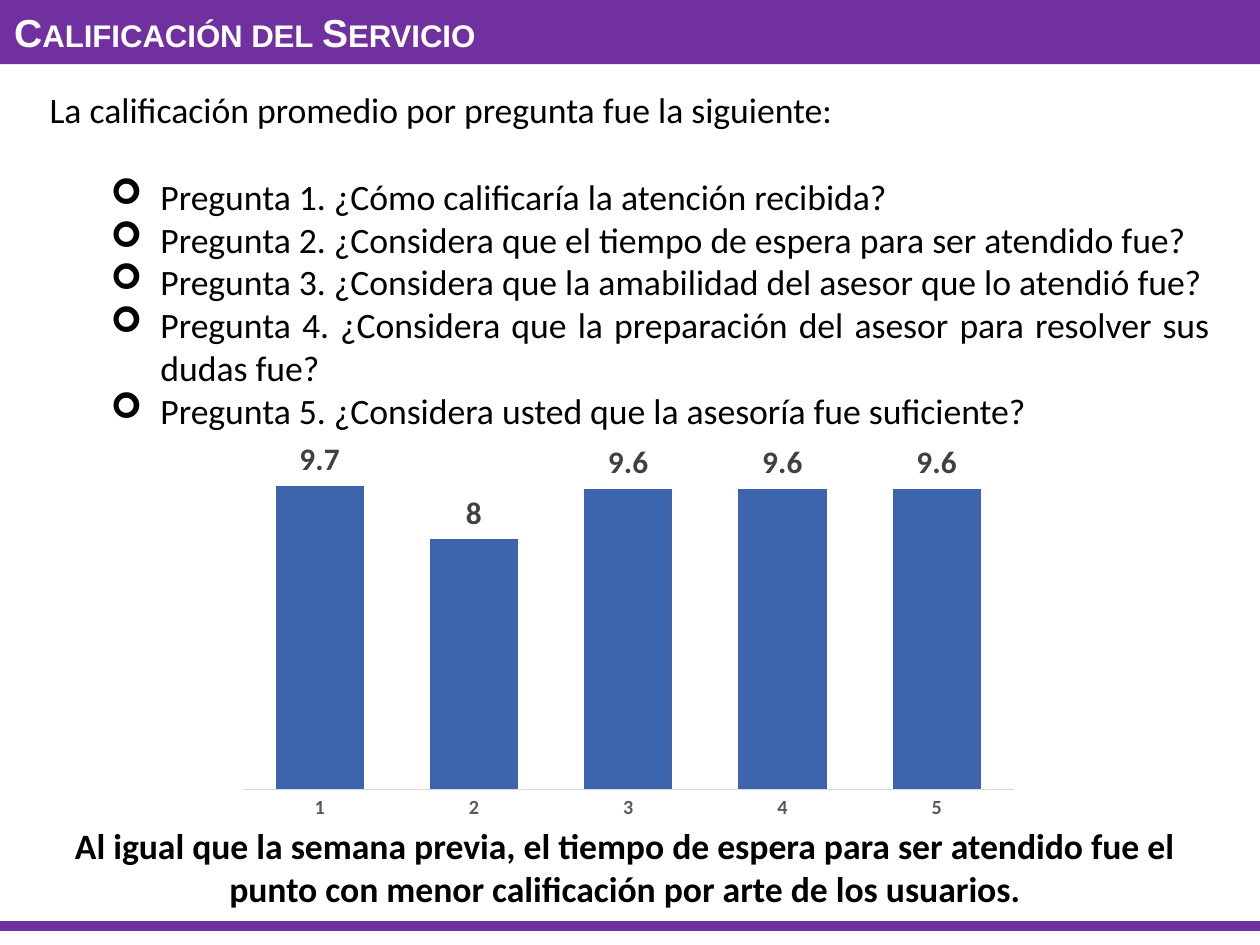
from lxml import etree
from pptx import Presentation
from pptx import util as u
from pptx.chart.data import CategoryChartData
from pptx.dml.color import RGBColor
from pptx.enum import chart as ch, shapes, text
from pptx.oxml import parse_xml
from pptx.oxml.ns import nsdecls, qn

# The slide is a grid of 112 columns by 84 rows of square cells
COLS, ROWS, CELL = 112, 84, 0.07
COLORS = {"purple": "7030A0", "white": "FFFFFF", "black": "000000",
          "bar": "3C65AE", "label": "404040", "tick": "595959", "axis": "D9D9D9"}
ALIGN = text.PP_ALIGN

QUESTIONS = [
    "¿Cómo calificaría la atención recibida?",
    "¿Considera que el tiempo de espera para ser atendido fue?",
    "¿Considera que la amabilidad del asesor que lo atendió fue?",
    "¿Considera que la preparación del asesor para resolver sus dudas fue?",
    "¿Considera usted que la asesoría fue suficiente?",
]
SCORES = [9.7, 8, 9.6, 9.6, 9.6]


def grid(*cells):
    return [u.Inches(c * CELL) for c in cells]


def rgb(name):
    return RGBColor.from_string(COLORS[name])


def set_font(font, size, color="black", bold=False, name="Calibri"):
    font.size, font.bold, font.name = u.Pt(size), bold, name
    font.color.rgb = rgb(color)


def add_box(slide, *cells, anchor=text.MSO_ANCHOR.TOP):
    tf = slide.shapes.add_textbox(*grid(*cells)).text_frame
    tf.word_wrap = True
    tf.vertical_anchor = anchor
    return tf


def write(tf, words, align=ALIGN.LEFT, bullet=None, before=0, **fmt):
    p = tf.paragraphs[0] if not tf.paragraphs[0].runs else tf.add_paragraph()
    p.alignment = align
    if before:
        p.space_before = u.Pt(before)
    if bullet:
        pPr = p._p.get_or_add_pPr()
        pPr.set("marL", str(u.Inches(0.69)))
        pPr.set("indent", str(u.Inches(-0.31)))
        etree.SubElement(pPr, qn("a:buFont")).set("typeface", "Wingdings")
        etree.SubElement(pPr, qn("a:buChar")).set("char", bullet)
    r = p.add_run()
    r.text = words
    set_font(r.font, **fmt)
    return r


def add_band(slide, *cells):
    sp = slide.shapes.add_shape(shapes.MSO_SHAPE.RECTANGLE, *grid(*cells))
    sp.shadow.inherit = False
    sp.fill.solid()
    sp.fill.fore_color.rgb = rgb("purple")
    sp.line.fill.background()


def add_rule(slide, row, width):
    line = slide.shapes.add_connector(
        shapes.MSO_CONNECTOR.STRAIGHT, *grid(-0.29, row, COLS + 0.29, row))
    line.line.color.rgb = rgb("purple")
    line.line.width = u.Pt(width)
    etree.SubElement(line._element.spPr, qn("a:effectLst"))


def add_title(slide, words):
    tf = add_box(slide, -0.14, 0, 111.29, 5.71, anchor=text.MSO_ANCHOR.MIDDLE)
    r = write(tf, words, size=17.5, color="white", bold=True, name="Arial")
    rPr = r.font._element
    rPr.set("cap", "small")
    rPr.find(qn("a:solidFill")).addnext(parse_xml(
        f'<a:effectLst {nsdecls("a")}><a:outerShdw blurRad="38100" dist="38100" '
        'dir="2700000" algn="tl"><a:srgbClr val="000000"/></a:outerShdw></a:effectLst>'))


def place_plot(chart, **shares):
    layout = parse_xml(
        f'<c:layout {nsdecls("c")}><c:manualLayout><c:layoutTarget val="inner"/>'
        '<c:xMode val="edge"/><c:yMode val="edge"/>'
        + "".join(f'<c:{k} val="{v}"/>' for k, v in shares.items())
        + "</c:manualLayout></c:layout>")
    area = chart._chartSpace.chart.plotArea
    for old in area.findall(qn("c:layout")):
        area.remove(old)
    area.insert(0, layout)


def add_scores(slide, scores, *cells):
    data = CategoryChartData()
    data.categories = [str(n) for n in range(1, len(scores) + 1)]
    data.add_series("Series 1", scores)
    chart = slide.shapes.add_chart(
        ch.XL_CHART_TYPE.COLUMN_CLUSTERED, *grid(*cells), data).chart
    chart.has_legend = chart.has_title = False
    set_font(chart.font, 10)
    place_plot(chart, x=0.02, y=0.02, w=0.96, h=0.89)

    # Axes
    values, cats = chart.value_axis, chart.category_axis
    values.visible = values.has_major_gridlines = False
    values.minimum_scale, values.maximum_scale = 0, 12
    cats.major_tick_mark = ch.XL_TICK_MARK.NONE
    cats.format.line.color.rgb = rgb("axis")
    cats.format.line.width = u.Pt(0.75)
    set_font(cats.tick_labels.font, 9, "tick", bold=True)

    # Columns and their labels
    plot = chart.plots[0]
    plot.gap_width, plot.vary_by_categories = 75, False
    series = plot.series[0]
    series.format.fill.solid()
    series.format.fill.fore_color.rgb = rgb("bar")
    labels = series.data_labels
    labels.show_value = True
    labels.position = ch.XL_LABEL_POSITION.OUTSIDE_END
    set_font(labels.font, 14, "label", bold=True)


def main():
    prs = Presentation()
    prs.slide_width, prs.slide_height = grid(COLS, ROWS)
    slide = prs.slides.add_slide(prs.slide_layouts[6])

    # Frame and title
    add_rule(slide, 82.29, 4.5)
    add_band(slide, -0.14, 0, COLS + 0.14, 5.71)
    add_title(slide, "Calificación del Servicio")

    # Questions
    tf = add_box(slide, 3, 7.14, 106, 34.14)
    write(tf, "La calificación promedio por pregunta fue la siguiente:",
          align=ALIGN.JUSTIFY, size=16)
    for n, question in enumerate(QUESTIONS, 1):
        write(tf, f"Pregunta {n}. {question}", align=ALIGN.JUSTIFY, bullet="➢",
              before=19.5 if n == 1 else 0, size=16)

    # Scores and conclusion
    add_scores(slide, SCORES, 20.14, 36, 71.43, 37.57)
    tf = add_box(slide, 2.57, 72.57, 106, 11)
    write(tf, "Al igual que la semana previa, el tiempo de espera para ser atendido "
          "fue el punto con menor calificación por arte de los usuarios.",
          align=ALIGN.CENTER, size=16, bold=True)

    prs.save("out.pptx")


if __name__ == "__main__":
    main()
